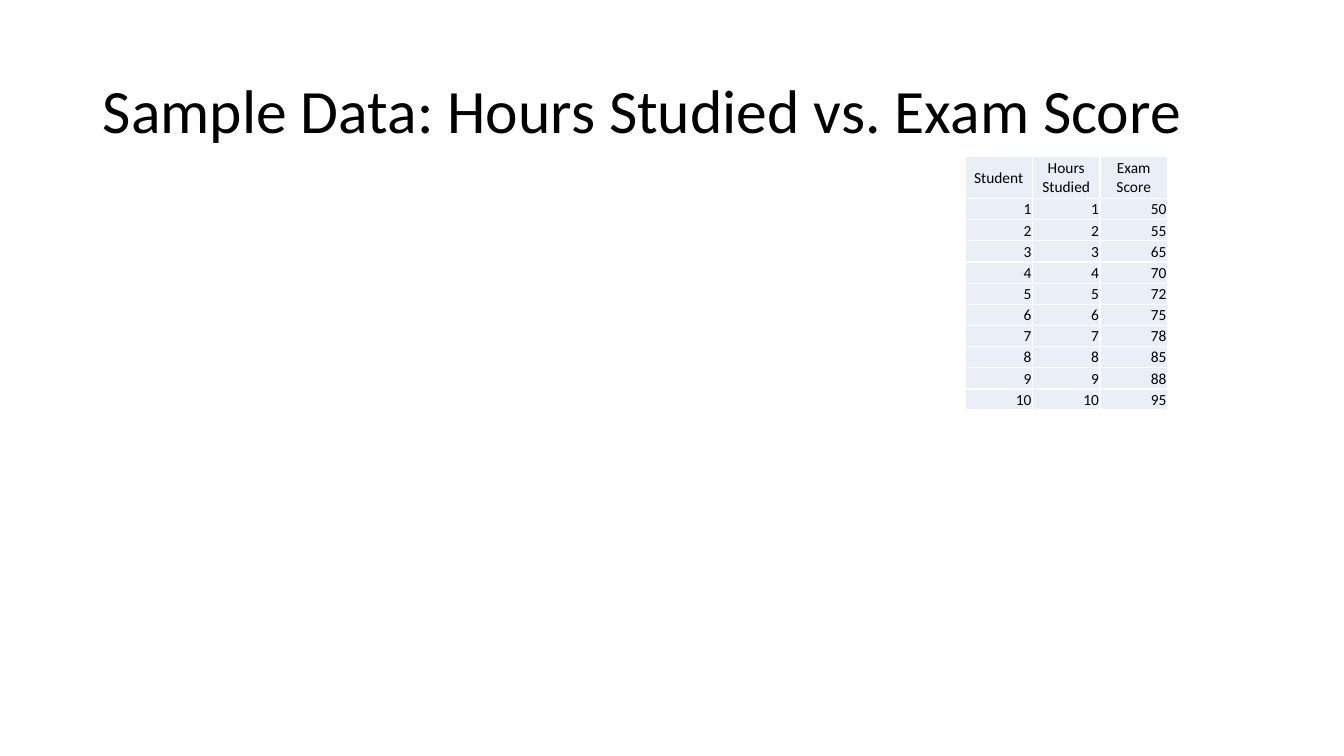
from pptx import Presentation
from pptx.dml.color import RGBColor
from pptx.enum.text import MSO_ANCHOR as Anchor, MSO_AUTO_SIZE as Fit, PP_ALIGN as Align
from pptx.oxml import parse_xml
from pptx.oxml.ns import nsdecls
from pptx.util import Inches, Pt

BLACK = RGBColor(0x00, 0x00, 0x00)
WHITE = RGBColor(0xFF, 0xFF, 0xFF)
PALE = RGBColor(0xEA, 0xEF, 0xF7)

HEADS = ["Student", "Hours Studied", "Exam Score"]
SCORES = [50, 55, 65, 70, 72, 75, 78, 85, 88, 95]


class Deck:
    """Holds the text style and the current slide, and draws its elements."""

    def __init__(self, font):
        self.font = font
        self.prs = Presentation()
        self.prs.slide_width = Inches(13.33)
        self.prs.slide_height = Inches(7.5)
        self.slide = self.prs.slides.add_slide(self.prs.slide_layouts[5])

    def label(self, frame, text, size, align):
        frame.text = text
        para = frame.paragraphs[0]
        para.alignment = align
        for run in para.runs:
            run.font.name = self.font
            run.font.size = Pt(size)
            run.font.color.rgb = BLACK
        return para

    def title(self, text, left, top, width, height):
        box = self.slide.shapes.title
        box.left, box.top = Inches(left), Inches(top)
        box.width, box.height = Inches(width), Inches(height)
        frame = box.text_frame
        frame.word_wrap = True
        frame.auto_size = Fit.NONE
        frame.vertical_anchor = Anchor.MIDDLE
        self.label(frame, text, 44, Align.LEFT).line_spacing = 0.9

    def cell(self, cell, text, align):
        cell.margin_left = cell.margin_right = cell.margin_top = Inches(0.01)
        cell.margin_bottom = 0
        cell.vertical_anchor = Anchor.MIDDLE
        self.label(cell.text_frame, text, 11, align)
        props = cell._tc.get_or_add_tcPr()
        for side in "LRTB":
            props.append(parse_xml(
                f'<a:ln{side} {nsdecls("a")} w="{Pt(1)}"><a:solidFill>'
                f'<a:srgbClr val="{WHITE}"/></a:solidFill></a:ln{side}>'))
        cell.fill.solid()
        cell.fill.fore_color.rgb = PALE

    def table(self, rows, left, top, col, row):
        width, height = col * len(rows[0]), row * (len(rows) + 1)
        table = self.slide.shapes.add_table(
            len(rows), len(rows[0]), Inches(left), Inches(top),
            Inches(width), Inches(height)).table
        table.first_row = table.horz_banding = False
        for column in table.columns:
            column.width = Inches(col)
        for r, values in enumerate(rows):
            table.rows[r].height = Inches(row if r else 2 * row)
            for c, value in enumerate(values):
                align = Align.RIGHT if r else Align.CENTER
                self.cell(table.cell(r, c), str(value), align)


def main():
    deck = Deck("Calibri")
    deck.title("Sample Data: Hours Studied vs. Exam Score", 0.92, 0.4, 11.5, 1.45)
    rows = [HEADS] + [[n, n, score] for n, score in enumerate(SCORES, 1)]
    deck.table(rows, 9.57, 1.55, 0.67, 0.21)
    deck.prs.save("out.pptx")


if __name__ == "__main__":
    main()
